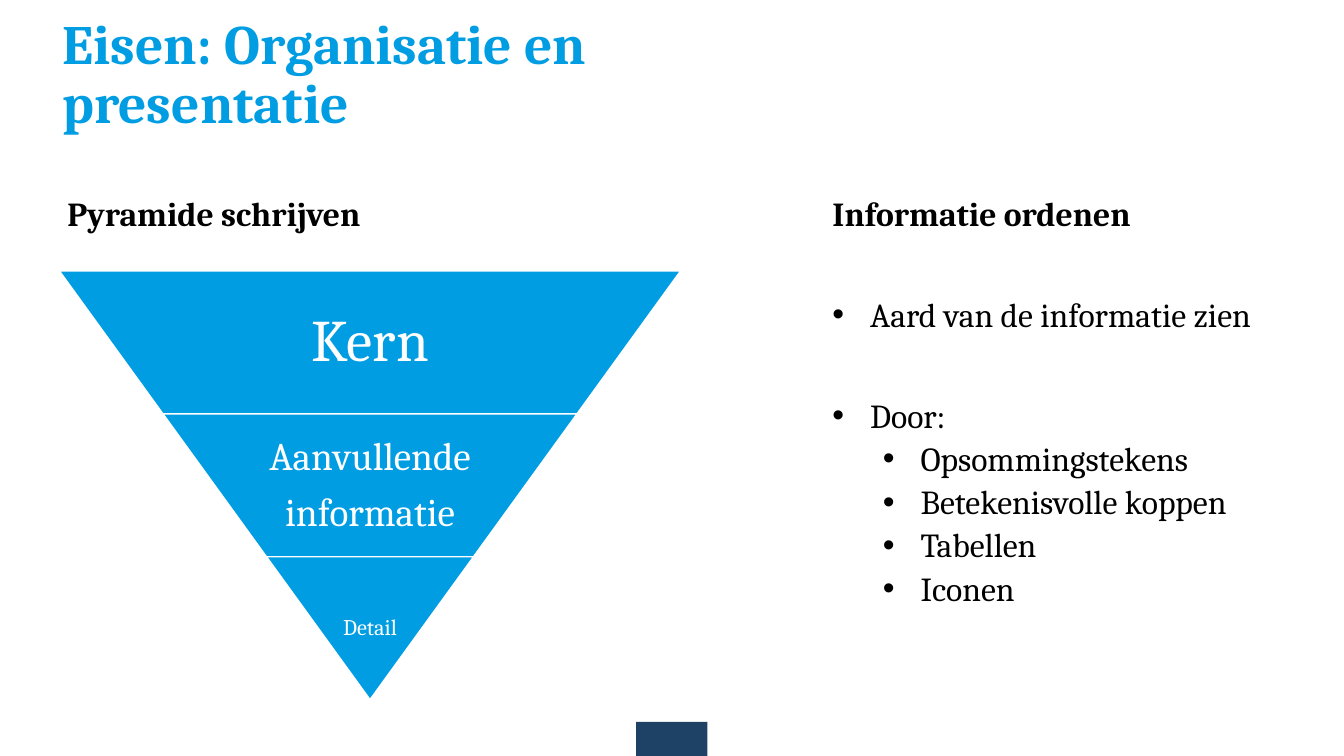
from lxml.etree import SubElement
from pptx import Presentation
from pptx.dml.color import RGBColor
from pptx.enum.shapes import MSO_SHAPE
from pptx.enum.text import MSO_ANCHOR, MSO_AUTO_SIZE, PP_ALIGN
from pptx.oxml.ns import qn
from pptx.util import Cm, Pt

BLUE = RGBColor(0x00, 0x9D, 0xE3)
NAVY = RGBColor(0x1E, 0x42, 0x66)
WHITE = RGBColor(0xFF, 0xFF, 0xFF)
BLACK = RGBColor(0x00, 0x00, 0x00)
FONT = "Cambria"

TITLE = "Eisen: Organisatie en \vpresentatie"
PYRAMID_HEADING = "Pyramide schrijven"
MAPPING_HEADING = "Informatie ordenen"
# lines, text size, side inset, top and bottom inset
TIERS = [
    (["Kern"], 42, 2.9, 0.15),
    (["Aanvullende", "informatie"], 28, 1.93, 0.1),
    (["Detail"], 16, 0.05, 0.05),
]
# level, text, space before
MAPPING_POINTS = [
    (0, "Aard van de informatie zien", 46),
    (0, "Door:", 46),
    (1, "Opsommingstekens", 5),
    (1, "Betekenisvolle koppen", 5),
    (1, "Tabellen", 5),
    (1, "Iconen", 5),
]

PYRAMID_LEFT, PYRAMID_TOP, PYRAMID_WIDTH = 1.5, 6.83, 15.65
TIER_HEIGHT = 3.6
COLUMN_TOP, COLUMN_WIDTH = 4.98, 12.7
HANGING, LEVEL_STEP = 0.95, 1.27


def set_attributes(target, formats):
    for name, value in formats.items():
        setattr(target, name, value)


def style(paragraph, size, color, bold=False):
    paragraph.line_spacing = 0.9
    set_attributes(paragraph.font, {"name": FONT, "size": Pt(size), "bold": bold})
    paragraph.font.color.rgb = color


def set_bullet(paragraph, level):
    paragraph.level = level
    properties = paragraph._p.get_or_add_pPr()
    properties.set("marL", str(Cm(HANGING + level * LEVEL_STEP)))
    properties.set("indent", str(-Cm(HANGING)))
    SubElement(properties, qn("a:buFont"), typeface="Arial")
    SubElement(properties, qn("a:buChar"), char="•")


def add_column(left, height, heading):
    column = slide.shapes.add_textbox(
        Cm(left), Cm(COLUMN_TOP), Cm(COLUMN_WIDTH), Cm(height)).text_frame
    set_attributes(column, {"word_wrap": True, "margin_left": 0, "margin_right": 0,
                            "margin_top": 0, "margin_bottom": 0})
    column.text = heading
    style(column.paragraphs[0], 24, BLACK, bold=True)
    return column


def add_tier(index, lines, size, side_inset, end_inset):
    """Draw one band of the inverted pyramid; the last one ends in a point."""
    step = PYRAMID_WIDTH / 2 / len(TIERS)
    right = PYRAMID_LEFT + PYRAMID_WIDTH
    top = PYRAMID_TOP + index * TIER_HEIGHT
    bottom = top + TIER_HEIGHT
    upper, lower = index * step, (index + 1) * step
    corners = [(right - upper, top), (right - lower, bottom),
               (PYRAMID_LEFT + lower, bottom), (PYRAMID_LEFT + upper, top)]
    start, *others = [(Cm(x), Cm(y)) for x, y in corners]
    builder = slide.shapes.build_freeform(*start)
    builder.add_line_segments(others, close=True)
    tier = builder.convert_to_shape()
    tier.shadow.inherit = False
    tier.fill.solid()
    tier.fill.fore_color.rgb = BLUE
    tier.line.color.rgb = WHITE
    tier.line.width = Pt(1)
    frame = tier.text_frame
    set_attributes(frame, {
        "word_wrap": True, "vertical_anchor": MSO_ANCHOR.MIDDLE,
        "margin_left": Cm(side_inset), "margin_right": Cm(side_inset),
        "margin_top": Cm(end_inset), "margin_bottom": Cm(end_inset)})
    frame.text = "\n".join(lines)
    for paragraph in frame.paragraphs:
        paragraph.alignment = PP_ALIGN.CENTER
        style(paragraph, size, WHITE)
    for paragraph in frame.paragraphs[1:]:
        paragraph.space_before = Pt(size * 0.35)


presentation = Presentation()
presentation.slide_width, presentation.slide_height = Cm(33.87), Cm(19.05)
slide = presentation.slides.add_slide(presentation.slide_layouts[5])

footer_block = slide.shapes.add_shape(
    MSO_SHAPE.RECTANGLE, Cm(16.03), Cm(18.19), Cm(1.8), Cm(0.86))
footer_block.shadow.inherit = False
footer_block.fill.solid()
footer_block.fill.fore_color.rgb = NAVY
footer_block.line.fill.background()

title = slide.shapes.title
set_attributes(title, {"left": Cm(1.32), "top": Cm(1.14),
                       "width": Cm(20.02), "height": Cm(1.55)})
title.text_frame.text = TITLE
set_attributes(title.text_frame, {"word_wrap": True, "auto_size": MSO_AUTO_SIZE.NONE,
                                  "vertical_anchor": MSO_ANCHOR.MIDDLE})
title.text_frame.paragraphs[0].alignment = PP_ALIGN.LEFT
style(title.text_frame.paragraphs[0], 39.6, BLUE, bold=True)

for index, tier_content in enumerate(TIERS):
    add_tier(index, *tier_content)

add_column(1.7, 1.2, PYRAMID_HEADING)
mapping = add_column(20.98, 12.93, MAPPING_HEADING)
for level, text, space_before in MAPPING_POINTS:
    point = mapping.add_paragraph()
    point.text = text
    set_bullet(point, level)
    point.space_before = Pt(space_before)
    style(point, 24, BLACK)

presentation.save("out.pptx")
